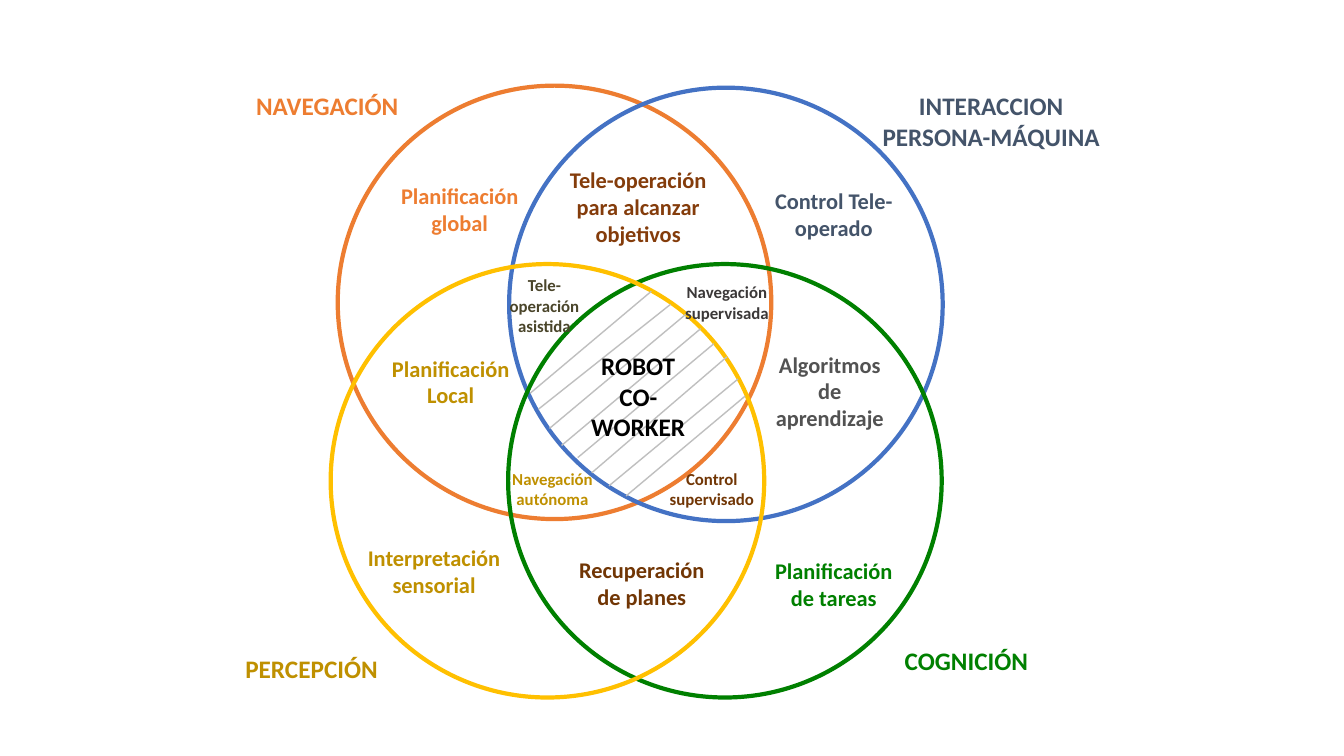
from lxml.etree import SubElement
from pptx import Presentation
from pptx.dml.color import RGBColor
from pptx.enum.shapes import MSO_CONNECTOR, MSO_SHAPE
from pptx.enum.text import MSO_AUTO_SIZE, PP_ALIGN
from pptx.oxml.ns import qn
from pptx.util import Inches, Pt

ORANGE = RGBColor(0xED, 0x7D, 0x31)
BLUE = RGBColor(0x44, 0x72, 0xC4)
GREEN = RGBColor(0x00, 0x80, 0x00)
YELLOW = RGBColor(0xFF, 0xC0, 0x00)
SLATE = RGBColor(0x44, 0x54, 0x6A)
GOLD = RGBColor(0xBF, 0x90, 0x00)
GRAY = RGBColor(0x52, 0x52, 0x52)
BROWN = RGBColor(0x71, 0x36, 0x05)
RUST = RGBColor(0x84, 0x3C, 0x0B)
OLIVE = RGBColor(0x4A, 0x45, 0x2A)
CHARCOAL = RGBColor(0x3B, 0x38, 0x38)
BLACK = RGBColor(0x00, 0x00, 0x00)
HATCH_GRAY = RGBColor(0xBF, 0xBF, 0xBF)


class VennSlide:
    font = "Calibri"
    diameter = 4.3
    ring_width = 3
    hatch_width = 1

    def __init__(self, slide):
        self.shapes = slide.shapes

    def ring(self, left, top, color):
        ring = self.shapes.add_shape(
            MSO_SHAPE.OVAL, Inches(left), Inches(top),
            Inches(self.diameter), Inches(self.diameter))
        ring.shadow.inherit = False
        ring.fill.background()
        ring.line.color.rgb = color
        ring.line.width = Pt(self.ring_width)

    def label(self, text, left, top, width, height, size, color):
        box = self.shapes.add_textbox(
            Inches(left), Inches(top), Inches(width), Inches(height))
        frame = box.text_frame
        frame.word_wrap = True
        frame.auto_size = MSO_AUTO_SIZE.SHAPE_TO_FIT_TEXT
        frame.text = text
        paragraph = frame.paragraphs[0]
        paragraph.alignment = PP_ALIGN.CENTER
        font = paragraph.runs[0].font
        font.name = self.font
        font.size = Pt(size)
        font.bold = True
        font.color.rgb = color

    def hatch(self, x1, y1, x2, y2):
        stroke = self.shapes.add_connector(
            MSO_CONNECTOR.STRAIGHT,
            Inches(x1), Inches(y1), Inches(x2), Inches(y2))
        stroke.line.color.rgb = HATCH_GRAY
        stroke.line.width = Pt(self.hatch_width)
        SubElement(stroke._element.spPr, qn("a:effectLst"))


RINGS = [
    (3.35, 0.85, ORANGE),
    (5.05, 0.87, BLUE),
    (5.04, 2.62, GREEN),
    (3.28, 2.62, YELLOW),
]

# Labels by text size: text, left, top, width, height, colour
LABELS = {
    18: [
        ("NAVEGACIÓN", 2.37, 0.85, 1.75, 0.4, ORANGE),
        ("INTERACCION PERSONA-MÁQUINA", 8.62, 0.85, 2.42, 0.71, SLATE),
        ("COGNICIÓN", 8.87, 6.35, 1.43, 0.4, GREEN),
        ("PERCEPCIÓN", 2.29, 6.43, 1.6, 0.4, GOLD),
    ],
    16: [
        ("Planificación de tareas", 7.58, 5.48, 1.38, 0.64, GREEN),
        ("Control Tele-operado", 7.51, 1.81, 1.52, 0.64, SLATE),
        ("Planificación global", 3.69, 1.76, 1.74, 0.64, ORANGE),
        ("Interpretación sensorial", 3.46, 5.35, 1.69, 0.64, GOLD),
        ("Planificación Local", 3.74, 3.47, 1.46, 0.64, GOLD),
        ("Algoritmos de aprendizaje", 7.54, 3.43, 1.38, 0.91, GRAY),
        ("Recuperación de planes", 5.54, 5.47, 1.65, 0.64, BROWN),
        ("Tele-operación para alcanzar objetivos",
         5.46, 1.6, 1.74, 0.91, RUST),
    ],
    12: [
        ("Tele-operación asistida", 4.84, 2.68, 1.12, 0.71, OLIVE),
        ("Control supervisado", 6.54, 4.6, 1.04, 0.5, BROWN),
        ("Navegación supervisada", 6.69, 2.75, 1.04, 0.5, CHARCOAL),
        ("Navegación autónoma", 4.96, 4.6, 1.04, 0.5, GOLD),
    ],
}

# Strokes across the shared centre, clipped by the rings
HATCHES = [
    (5.26, 3.9, 6.46, 2.89),
    (5.34, 4.06, 6.65, 3.02),
    (5.45, 4.25, 6.8, 3.12),
    (5.57, 4.42, 6.95, 3.26),
    (5.73, 4.54, 7.08, 3.41),
    (5.87, 4.69, 7.21, 3.54),
    (6.04, 4.82, 7.32, 3.76),
    (6.21, 4.92, 7.39, 3.93),
]


def main():
    presentation = Presentation()
    presentation.slide_width = Inches(13.33)
    presentation.slide_height = Inches(7.5)
    blank_layout = presentation.slide_layouts[6]
    venn = VennSlide(presentation.slides.add_slide(blank_layout))

    # Four overlapping fields
    for ring in RINGS:
        venn.ring(*ring)

    # Names of the fields and their overlaps
    for size, labels in LABELS.items():
        for text, left, top, width, height, color in labels:
            venn.label(text, left, top, width, height, size, color)

    # Hatched centre
    for ends in HATCHES:
        venn.hatch(*ends)
    venn.label("ROBOT CO-WORKER", 5.71, 3.43, 1.24, 1.01, 18, BLACK)

    presentation.save("out.pptx")


if __name__ == "__main__":
    main()
